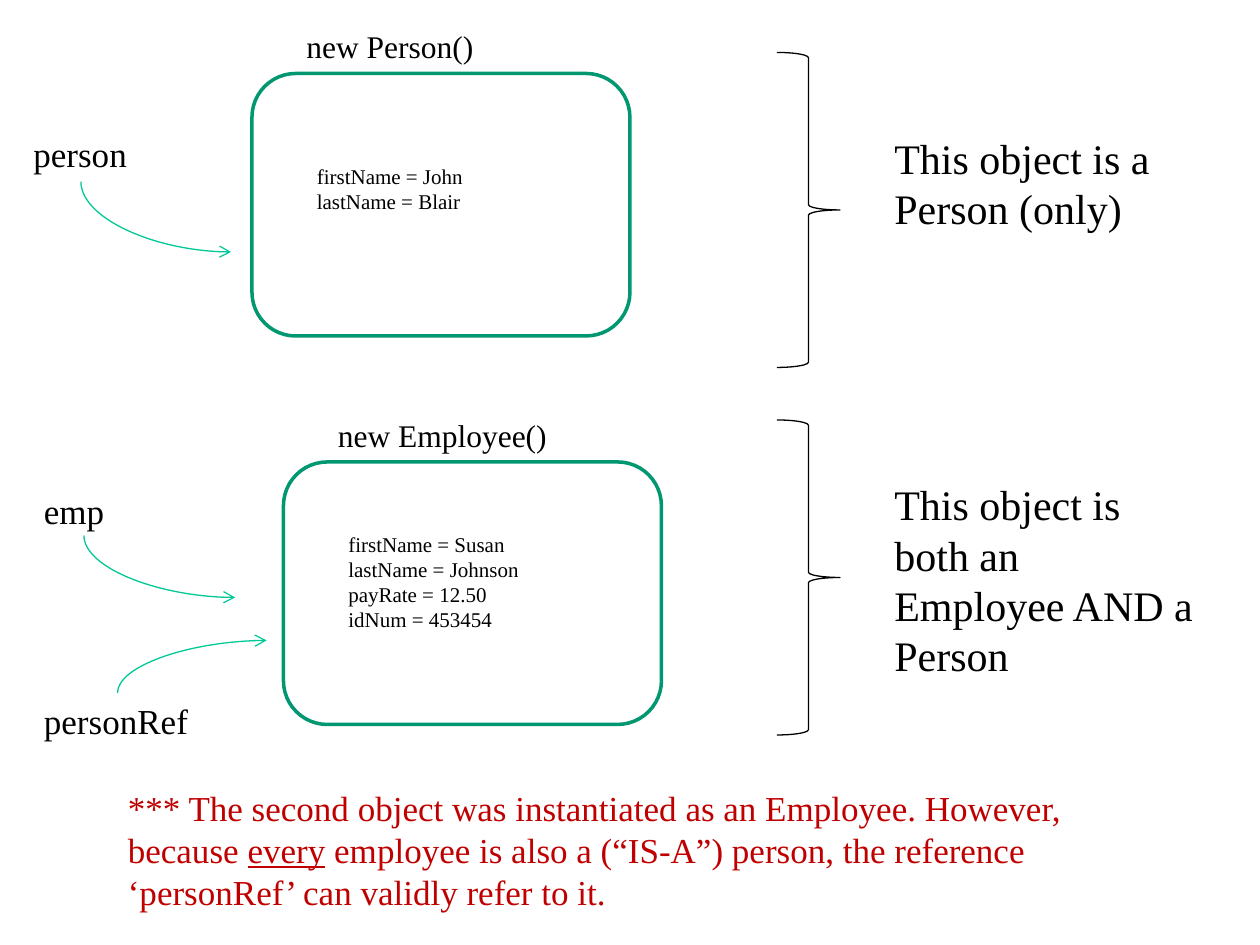
import pptx
import pptx.dml.color
import pptx.enum.shapes
import pptx.enum.text
import pptx.oxml
import pptx.oxml.ns
import pptx.util

PX = 7620
FONT = "Times New Roman"
BLACK, GREEN, MINT, RED = "000000", "009771", "00C896", "C00000"
SHAPE = pptx.enum.shapes.MSO_SHAPE


def px(n):
    return pptx.util.Emu(round(n * PX))


def rgb(value):
    return pptx.dml.color.RGBColor.from_string(value)


class Deck:
    def __init__(self, width, height):
        self.prs = pptx.Presentation()
        self.prs.slide_width, self.prs.slide_height = px(width), px(height)
        self.s = None

    def blank(self):
        self.s = self.prs.slides.add_slide(self.prs.slide_layouts[6])

    def outline(self, kind, x, y, w, h, color, weight):
        sp = self.s.shapes.add_shape(kind, px(x), px(y), px(w), px(h))
        sp.shadow.inherit = False
        sp.fill.background()
        sp.line.color.rgb = rgb(color)
        sp.line.width = pptx.util.Pt(weight)

    def text(self, x, y, w, h, lines, size, color=BLACK, wrap=True, underlined=None):
        sp = self.s.shapes.add_textbox(px(x), px(y), px(w), px(h))
        tf = sp.text_frame
        tf.word_wrap = wrap
        tf.auto_size = pptx.enum.text.MSO_AUTO_SIZE.SHAPE_TO_FIT_TEXT
        for i, parts in enumerate(lines):
            p = tf.add_paragraph() if i else tf.paragraphs[0]
            for part in parts:
                r = p.add_run()
                r.text = part
                r.font.name = FONT
                r.font.size = pptx.util.Pt(size)
                r.font.color.rgb = rgb(color)
                if part == underlined:
                    r.font.underline = True

    def curve(self, x1, y1, x2, y2):
        cx, cy = (x1 + x2) / 2, (y1 + y2) / 2
        dx, dy = (x2 - x1) / 2, abs(y2 - y1) / 2
        down = y2 > y1
        side = -dx if down else dx
        c = self.s.shapes.add_connector(
            pptx.enum.shapes.MSO_CONNECTOR.CURVE,
            px(cx + dy), px(cy + side), px(cx - dy), px(cy - side))
        c.line.color.rgb = rgb(MINT)
        c.line.width = pptx.util.Pt(0.75)
        spPr = c._element.spPr
        spPr.find(pptx.oxml.ns.qn("a:xfrm")).set("rot", str((270 if down else 90) * 60000))
        spPr.find(pptx.oxml.ns.qn("a:prstGeom")).set("prst", "curvedConnector2")
        ns = pptx.oxml.ns.nsdecls("a")
        ln = spPr.find(pptx.oxml.ns.qn("a:ln"))
        ln.append(pptx.oxml.parse_xml(f'<a:tailEnd {ns} type="arrow"/>'))
        spPr.append(pptx.oxml.parse_xml(f"<a:effectLst {ns}/>"))

    def save(self):
        self.prs.save("out.pptx")


def main():
    d = Deck(1200, 900)
    d.blank()

    for x, y in ((240, 70), (270, 440)):
        d.outline(SHAPE.ROUNDED_RECTANGLE, x, y, 360, 250, GREEN, 2)

    for x, y, w, name in ((20, 120, 114, "person"), (30, 460, 82, "emp"),
                          (30, 660, 162, "personRef")):
        d.text(x, y, w, 53, [[name]], 20, wrap=False)

    for ends in ((77, 173, 220, 240), (80, 510, 224, 569), (112, 660, 254, 610)):
        d.curve(*ends)

    for y in (50, 400):
        d.outline(SHAPE.RIGHT_BRACE, 740, y, 60, 300, BLACK, 0.75)

    for x, y, call in ((280, 20, "new Person()"), (310, 390, "new Employee()")):
        d.text(x, y, 280, 48, [[call]], 18)

    for y, h, meaning in ((120, 109, "This object is a Person (only)"),
                          (450, 206, "This object is both an Employee AND a Person")):
        d.text(840, y, 310, h, [[meaning]], 24)

    note = ["*** The second object was instantiated as an Employee. However, because ",
            "every",
            " employee is also a (“IS-A”) person, the reference ‘personRef’ can validly refer to it."]
    d.text(110, 743, 960, 133, [note], 20, RED, underlined="every")

    person = ["firstName = John", "lastName = Blair"]
    employee = ["firstName = Susan", "lastName = Johnson", "payRate = 12.50", "idNum = 453454"]
    for x, y, h, fields in ((290, 150, 61, person), (320, 500, 109, employee)):
        d.text(x, y, 280, h, [[field] for field in fields], 12)

    d.save()


if __name__ == "__main__":
    main()
